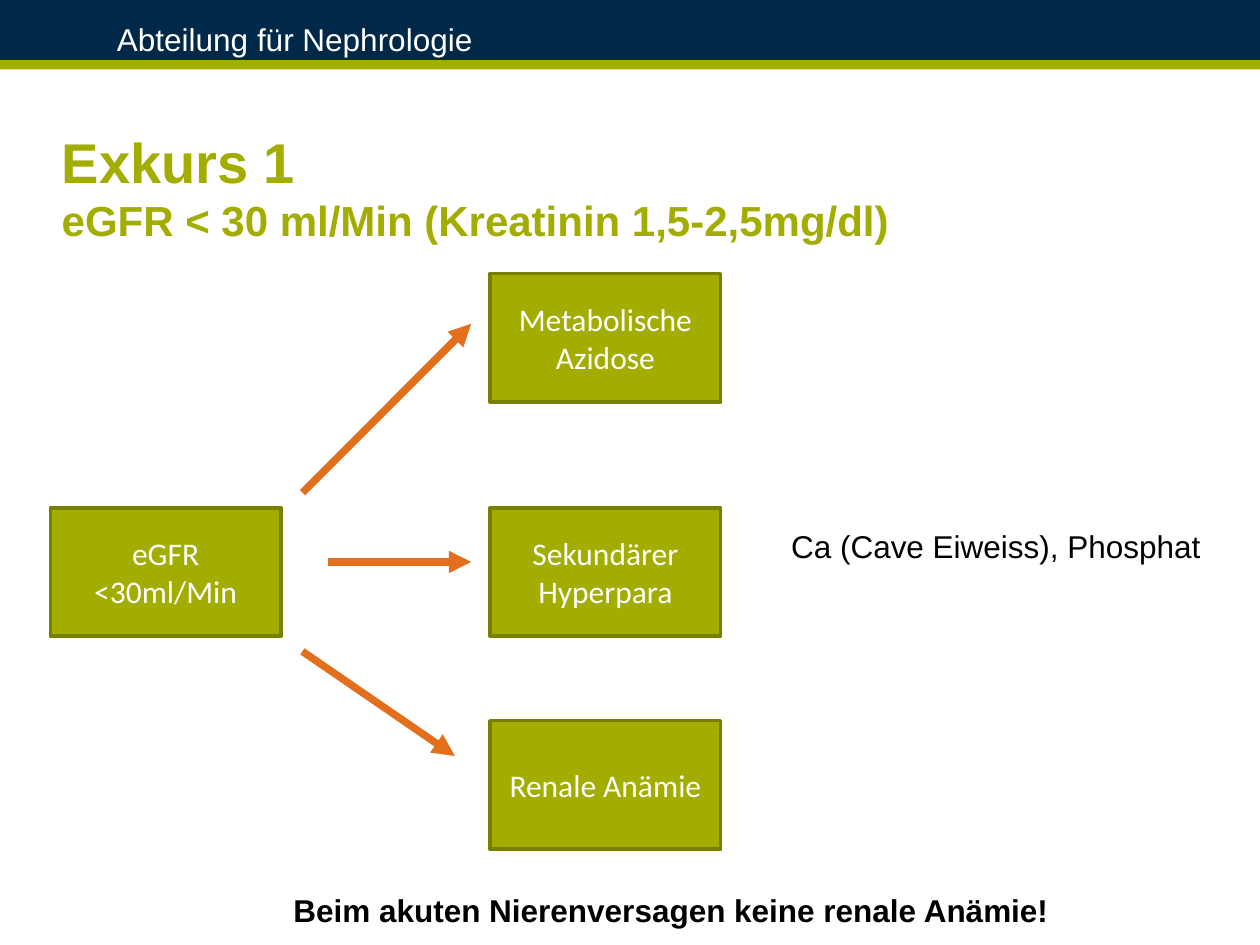
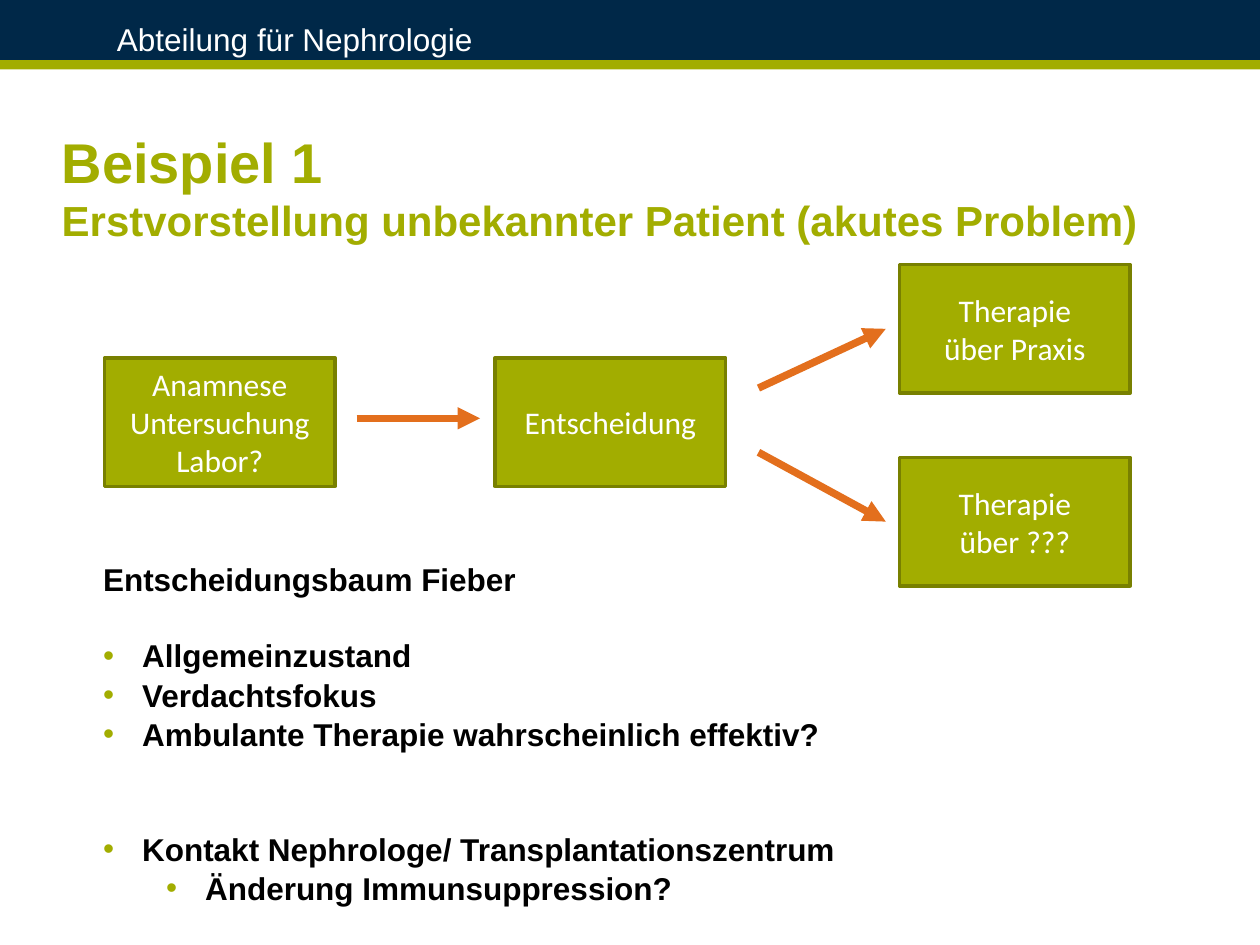
from lxml import etree
from pptx import Presentation
from pptx.dml.color import RGBColor
from pptx.enum.shapes import MSO_CONNECTOR as Connector, MSO_SHAPE as Shape
from pptx.enum.text import MSO_ANCHOR as Anchor, PP_ALIGN as Align
from pptx.oxml.ns import qn
from pptx.util import Inches, Pt

NAVY, GREEN, DARK_GREEN = "002848", "A2AD00", "788000"
ORANGE, WHITE, BLACK = "E36F1D", "FFFFFF", "000000"
SLIDE_WIDTH, SLIDE_HEIGHT = 10, 7.5
BOX_WIDTH, BOX_HEIGHT = 1.83, 1.02
LINE_GAP = 21.5  # height of one body line in points

HEADER = {"name": "Arial", "size": Pt(18), "color": WHITE}
TITLE = {"name": "Arial", "size": Pt(32), "color": GREEN, "bold": True}
SUBTITLE = {**TITLE, "size": Pt(24)}
BOX_TEXT = {"name": "Calibri", "size": Pt(18), "color": WHITE}
BODY = {"name": "Arial", "size": Pt(18), "color": BLACK}
BOLD_BODY = {**BODY, "bold": True}


def rgb(value):
    return RGBColor.from_string(value)


def apply_format(font, values):
    for key, value in values.items():
        if key == "color":
            font.color.rgb = rgb(value)
        else:
            setattr(font, key, value)


def write(frame, lines, align=Align.LEFT):
    """Fill a text frame with (text, format) lines and return the paragraphs."""
    paragraphs = []
    for number, (text, values) in enumerate(lines):
        paragraph = frame.add_paragraph() if number else frame.paragraphs[0]
        paragraph.alignment = align
        run = paragraph.add_run()
        run.text = text
        apply_format(run.font, values)
        paragraphs.append(paragraph)
    return paragraphs


def add_text(slide, box, lines, wrap=True, **margins):
    shape = slide.shapes.add_textbox(*map(Inches, box))
    frame = shape.text_frame
    frame.word_wrap = wrap
    for side, length in margins.items():
        setattr(frame, f"margin_{side}", Inches(length))
    return write(frame, lines)


def add_rectangle(slide, box, fill, line=None, width=0.75):
    shape = slide.shapes.add_shape(Shape.RECTANGLE, *map(Inches, box))
    shape.shadow.inherit = False
    shape.fill.solid()
    shape.fill.fore_color.rgb = rgb(fill)
    if line:
        shape.line.color.rgb = rgb(line)
        shape.line.width = Pt(width)
    else:
        shape.line.fill.background()
    return shape


def add_line(slide, start, end, color, width, arrow=False):
    connector = slide.shapes.add_connector(
        Connector.STRAIGHT, *map(Inches, (*start, *end)))
    connector.line.color.rgb = rgb(color)
    connector.line.width = Pt(width)
    if arrow:
        etree.SubElement(connector.line._ln, qn("a:tailEnd"), type="triangle")
    etree.SubElement(connector._element.spPr, qn("a:effectLst"))


def add_bullet(paragraph, left, hanging=0.31):
    properties = paragraph._p.get_or_add_pPr()
    properties.set("marL", str(Inches(left)))
    properties.set("indent", str(-Inches(hanging)))
    color = etree.SubElement(properties, qn("a:buClr"))
    etree.SubElement(color, qn("a:srgbClr"), val=GREEN)
    etree.SubElement(properties, qn("a:buFont"), typeface="Arial")
    etree.SubElement(properties, qn("a:buChar"), char="•")


def add_page(presentation, title, subtitle):
    """Add a slide with the header band and the two-line title."""
    slide = presentation.slides.add_slide(presentation.slide_layouts[6])
    add_rectangle(slide, (0, 0, SLIDE_WIDTH, SLIDE_HEIGHT), NAVY, NAVY)
    add_line(slide, (0, 0.52), (SLIDE_WIDTH, 0.52), GREEN, 6)
    add_rectangle(slide, (0, 0.55, SLIDE_WIDTH, SLIDE_HEIGHT - 0.55), WHITE)
    add_text(slide, (0.83, 0.08, 6.59, 0.25),
             [("Abteilung für Nephrologie", HEADER)], top=0.08)
    add_text(slide, (0.42, 1.01, 9.2, 0.92),
             [(title, TITLE), (subtitle, SUBTITLE)], left=0.07, top=0)
    return slide


def add_flow(slide, origin, boxes, arrows):
    """Place boxes and arrows at offsets from the origin of the diagram."""
    left, top = origin
    for x, y, *lines in boxes:
        box = (left + x, top + y, BOX_WIDTH, BOX_HEIGHT)
        shape = add_rectangle(slide, box, GREEN, DARK_GREEN, 2)
        shape.text_frame.word_wrap = True
        shape.text_frame.vertical_anchor = Anchor.MIDDLE
        write(shape.text_frame, [(line, BOX_TEXT) for line in lines], Align.CENTER)
    for x1, y1, x2, y2 in arrows:
        add_line(slide, (left + x1, top + y1), (left + x2, top + y2),
                 ORANGE, 4.25, arrow=True)


def add_fever_list(slide, box):
    # Text, left indent (None for the heading), empty lines above
    items = [
        ("Entscheidungsbaum Fieber", None, 0),
        ("Allgemeinzustand", 0.31, 1),
        ("Verdachtsfokus", 0.31, 0),
        ("Ambulante Therapie wahrscheinlich effektiv?", 0.31, 0),
        ("Kontakt Nephrologe/ Transplantationszentrum", 0.31, 2),
        ("Änderung Immunsuppression?", 0.81, 0),
    ]
    paragraphs = add_text(slide, box, [(text, BOLD_BODY) for text, *_ in items])
    for paragraph, (_, indent, gaps) in zip(paragraphs, items):
        paragraph.line_spacing = 1.04
        if gaps:
            paragraph.space_before = Pt(gaps * LINE_GAP)
        if indent:
            add_bullet(paragraph, indent)


def add_excursus(presentation):
    slide = add_page(presentation, "Exkurs 1",
                     "eGFR < 30 ml/Min (Kreatinin 1,5-2,5mg/dl)")
    result_x, middle_y = 3.49, 1.86
    add_flow(
        slide, (0.4, 2.17),
        boxes=[(0, middle_y, "eGFR", "<30ml/Min"),
               (result_x, 0, "Metabolische", "Azidose"),
               (result_x, middle_y, "Sekundärer Hyperpara"),
               (result_x, 3.55, "Renale Anämie")],
        arrows=[(2, 1.74, 3.34, 0.4), (2.2, 2.29, 3.34, 2.29),
                (2, 3, 3.21, 3.83)])
    # Remarks beside and below the diagram
    add_text(slide, (6.18, 4.13, 3.48, 0.4),
             [("Ca (Cave Eiweiss), Phosphat", BODY)], wrap=False)
    add_text(slide, (2.23, 7.02, 6.25, 0.4),
             [("Beim akuten Nierenversagen keine renale Anämie!", BOLD_BODY)],
             wrap=False)


def add_example(presentation):
    slide = add_page(presentation, "Beispiel 1",
                     "Erstvorstellung unbekannter Patient (akutes Problem)")
    middle_y, therapy_x = 0.74, 6.31
    add_flow(
        slide, (0.83, 2.1),
        boxes=[(0, middle_y, "Anamnese", "Untersuchung", "Labor?"),
               (3.1, middle_y, "Entscheidung"),
               (therapy_x, 0, "Therapie", "über Praxis"),
               (therapy_x, 1.53, "Therapie", "über ???")],
        arrows=[(2, 1.22, 2.98, 1.22), (5.19, 0.98, 6.2, 0.51),
                (5.19, 1.49, 6.2, 2.04)])
    add_fever_list(slide, (0.72, 4.38, 6.36, 3.13))


def main():
    presentation = Presentation()
    presentation.slide_width = Inches(SLIDE_WIDTH)
    presentation.slide_height = Inches(SLIDE_HEIGHT)
    add_excursus(presentation)
    add_example(presentation)
    presentation.save("out.pptx")


if __name__ == "__main__":
    main()
